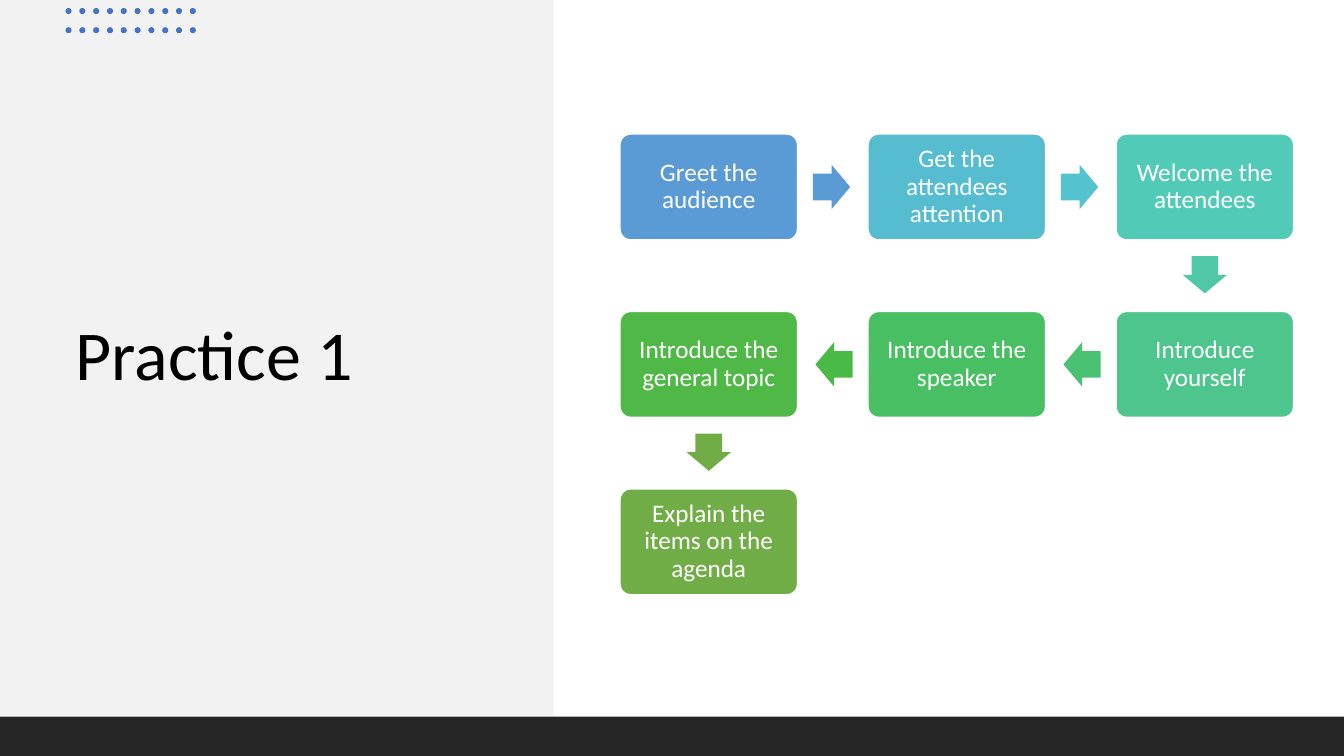
"""Build the Practice 1 slide: a title panel beside a winding seven-step flow."""
from pptx import Presentation, util as u
from pptx.dml.color import RGBColor
from pptx.enum import shapes, text

PANEL = RGBColor(0xF2, 0xF2, 0xF2)
FOOTER = RGBColor(0x26, 0x26, 0x26)
DOT = RGBColor(0x44, 0x72, 0xC4)
WHITE = RGBColor(0xFF, 0xFF, 0xFF)
BLACK = RGBColor(0x00, 0x00, 0x00)
STEP_COLOURS = [RGBColor.from_string(c) for c in
                ("5B9BD5", "56BCD0", "52CAB8", "4DC58D", "49BF64", "50B846", "70AD47")]
ARROW_COLOURS = [RGBColor.from_string(c) for c in
                 ("5B9BD5", "55C3CF", "50C8A7", "4BC174", "4ABA46", "70AD47")]
STEPS = ["Greet the audience", "Get the attendees attention", "Welcome the attendees",
         "Introduce yourself", "Introduce the speaker", "Introduce the general topic",
         "Explain the items on the agenda"]
COLUMNS = 3
FLOW_LEFT, FLOW_TOP = 6.15, 1.33
COLUMN_STEP, ROW_STEP = 2.46, 1.76
BOX_WIDTH, BOX_HEIGHT = 1.76, 1.05
ARROW_LENGTH, ARROW_WIDTH = 0.37, 0.44
ARROW_SHARE = 0.495
TURNS = {(1, 0): 0, (0, 1): 90, (-1, 0): 180}

deck = Presentation()
deck.slide_width, deck.slide_height = u.Inches(13.33), u.Inches(7.5)
page = deck.slides.add_slide(deck.slide_layouts[5])


def add_shape(kind, left, top, width, height, colour):
    shape = page.shapes.add_shape(kind, *map(u.Inches, (left, top, width, height)))
    shape.shadow.inherit = False
    shape.fill.solid()
    shape.fill.fore_color.rgb = colour
    shape.line.fill.background()
    return shape


def add_text(para, words, size, colour, align):
    para.alignment = align
    para.line_spacing = 0.9
    span = para.add_run()
    span.text = words
    span.font.name = "Calibri"
    span.font.size = u.Pt(size)
    span.font.color.rgb = colour


panel = add_shape(shapes.MSO_SHAPE.RECTANGLE, 0, 0, 5.49, 7.1, PANEL)
title = page.shapes.title
title.element.addprevious(panel.element)
title.left, title.top, title.width, title.height = map(u.Inches, (0.65, 1.32, 4.24, 4.45))
title.text_frame.vertical_anchor = text.MSO_ANCHOR.MIDDLE
add_text(title.text_frame.paragraphs[0], "Practice 1", 50, BLACK, text.PP_ALIGN.LEFT)

for row in range(2):
    for column in range(10):
        add_shape(shapes.MSO_SHAPE.OVAL, 0.65 + column * 0.137, 0.08 + row * 0.19,
                  0.06, 0.06, DOT)

add_shape(shapes.MSO_SHAPE.RECTANGLE, 0, 7.11, 13.33, 0.39, FOOTER)

cells = []
for number in range(len(STEPS)):
    row, column = divmod(number, COLUMNS)
    cells.append((COLUMNS - 1 - column if row % 2 else column, row))

for (column, row), words, colour in zip(cells, STEPS, STEP_COLOURS):
    box = add_shape(shapes.MSO_SHAPE.ROUNDED_RECTANGLE, FLOW_LEFT + column * COLUMN_STEP,
                    FLOW_TOP + row * ROW_STEP, BOX_WIDTH, BOX_HEIGHT, colour)
    box.adjustments[0] = 0.1
    box.line.color.rgb = WHITE
    box.line.width = u.Pt(1)
    frame = box.text_frame
    frame.word_wrap = True
    frame.vertical_anchor = text.MSO_ANCHOR.MIDDLE
    frame.margin_left = frame.margin_right = u.Inches(0.07)
    frame.margin_top = frame.margin_bottom = u.Inches(0.07)
    add_text(frame.paragraphs[0], words, 18, WHITE, text.PP_ALIGN.CENTER)

for (column, row), (next_column, next_row), colour in zip(cells, cells[1:], ARROW_COLOURS):
    across, down = next_column - column, next_row - row
    centre_x = FLOW_LEFT + BOX_WIDTH / 2 + (column + across * ARROW_SHARE) * COLUMN_STEP
    centre_y = FLOW_TOP + BOX_HEIGHT / 2 + (row + down * ARROW_SHARE) * ROW_STEP
    arrow = add_shape(shapes.MSO_SHAPE.RIGHT_ARROW, centre_x - ARROW_LENGTH / 2,
                      centre_y - ARROW_WIDTH / 2, ARROW_LENGTH, ARROW_WIDTH, colour)
    arrow.adjustments[0] = 0.6
    arrow.rotation = TURNS[across, down]

deck.save("out.pptx")
